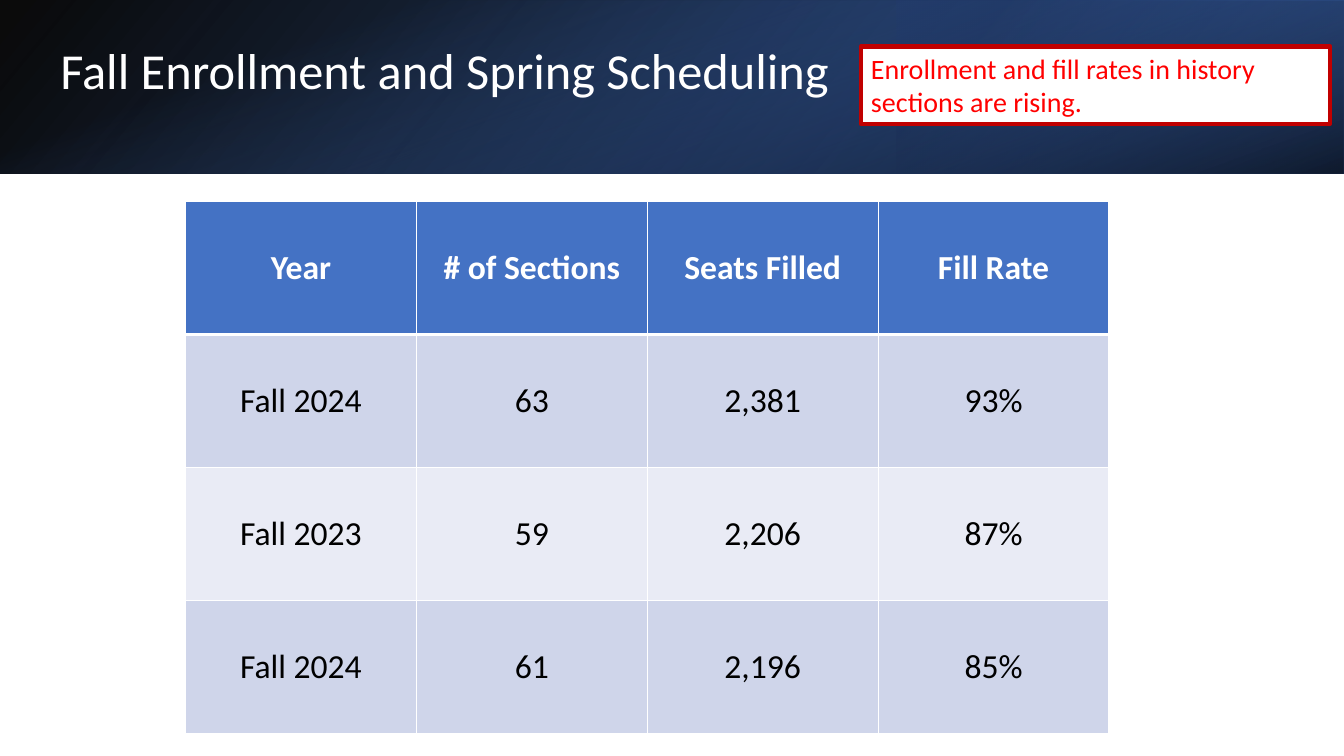
import pptx
import pptx.dml.color
import pptx.enum.shapes
import pptx.enum.text
import pptx.oxml
import pptx.oxml.ns
import pptx.util

Inches = pptx.util.Inches
Pt = pptx.util.Pt
RGBColor = pptx.dml.color.RGBColor
MIDDLE = pptx.enum.text.MSO_ANCHOR.MIDDLE
TOP = pptx.enum.text.MSO_ANCHOR.TOP

TITLE = "Fall Enrollment and Spring Scheduling"
CALLOUT = "Enrollment and fill rates in history sections are rising."
ROWS = [
    ("Year", "# of Sections", "Seats Filled", "Fill Rate"),
    ("Fall 2024", "63", "2,381", "93%"),
    ("Fall 2023", "59", "2,206", "87%"),
    ("Fall 2024", "61", "2,196", "85%"),
]

FONT = "Calibri"
WHITE = RGBColor(0xFF, 0xFF, 0xFF)
BLACK = RGBColor(0x00, 0x00, 0x00)
RED = RGBColor(0xFF, 0x00, 0x00)
DARK_RED = RGBColor(0xC0, 0x00, 0x00)
BLUE = RGBColor(0x44, 0x72, 0xC4)
DEEP_BLUE = RGBColor(0x2F, 0x55, 0x97)
NAVY = RGBColor(0x20, 0x38, 0x64)
BAND_DARK = RGBColor(0xCF, 0xD5, 0xEA)
BAND_LIGHT = RGBColor(0xE9, 0xEB, 0xF5)

# box, rotation, flipped, gradient angle, stops (position %, colour, opacity %)
BANNER_LAYERS = [
    ((0, 0, 13.33, 1.72), 0, True, 140, [(0, BLACK, 96), (100, DEEP_BLUE, 100)]),
    ((8.89, 0, 4.44, 1.72), 180, True, 320, [(19, NAVY, 68), (100, BLUE, 79)]),
    ((5.8, -5.8, 1.72, 13.33), 90, False, 340, [(23, BLUE, 0), (99, BLACK, 74)]),
]
TABLE_LEFT, TABLE_TOP = 1.84, 2
COLUMN_WIDTH, ROW_HEIGHT = 2.29, 1.32


def add_rectangle(slide, box):
    shape = slide.shapes.add_shape(
        pptx.enum.shapes.MSO_SHAPE.RECTANGLE, *map(Inches, box))
    shape.shadow.inherit = False
    return shape


def add_banner_layer(slide, box, rotation, flipped, angle, stops):
    shape = add_rectangle(slide, box)
    shape.rotation = rotation
    shape.line.fill.background()
    shape.fill.background()
    properties = shape.element.spPr
    if flipped:
        properties.find(pptx.oxml.ns.qn("a:xfrm")).set("flipH", "1")
    stop_xml = "".join(
        f'<a:gs pos="{position * 1000}"><a:srgbClr val="{color}">'
        f'<a:alpha val="{opacity * 1000}"/></a:srgbClr></a:gs>'
        for position, color, opacity in stops)
    gradient = pptx.oxml.parse_xml(
        f'<a:gradFill {pptx.oxml.ns.nsdecls("a")} rotWithShape="1">'
        f'<a:gsLst>{stop_xml}</a:gsLst>'
        f'<a:lin ang="{angle * 60000}" scaled="0"/></a:gradFill>')
    properties.replace(properties.find(pptx.oxml.ns.qn("a:noFill")), gradient)


def write(text_frame, text, size, color, anchor):
    text_frame.word_wrap = True
    text_frame.vertical_anchor = anchor
    paragraph = text_frame.paragraphs[0]
    paragraph.text = text
    paragraph.font.name = FONT
    paragraph.font.size = Pt(size)
    paragraph.font.color.rgb = color
    paragraph.alignment = pptx.enum.text.PP_ALIGN.LEFT
    return paragraph


def set_borders(cell, top, bottom):
    """Draw white cell borders; top and bottom are widths in points."""
    properties = cell._tc.get_or_add_tcPr()
    widths = [("lnL", 1), ("lnR", 1), ("lnT", top), ("lnB", bottom)]
    for index, (side, width) in enumerate(widths):
        properties.insert(index, pptx.oxml.parse_xml(
            f'<a:{side} {pptx.oxml.ns.nsdecls("a")} w="{Pt(width)}">'
            f'<a:solidFill><a:srgbClr val="{WHITE}"/></a:solidFill></a:{side}>'))


def add_enrollment_table(slide):
    column_count = len(ROWS[0])
    table = slide.shapes.add_table(
        len(ROWS), column_count, Inches(TABLE_LEFT), Inches(TABLE_TOP),
        Inches(COLUMN_WIDTH * column_count), Inches(ROW_HEIGHT * len(ROWS))).table
    for row_index, row in enumerate(ROWS):
        header = row_index == 0
        band = BAND_DARK if row_index % 2 else BAND_LIGHT
        for column_index, text in enumerate(row):
            cell = table.cell(row_index, column_index)
            cell.fill.solid()
            cell.fill.fore_color.rgb = BLUE if header else band
            cell.vertical_anchor = MIDDLE
            paragraph = write(cell.text_frame, text, 24, WHITE if header else BLACK, MIDDLE)
            paragraph.alignment = pptx.enum.text.PP_ALIGN.CENTER
            paragraph.font.bold = header
            set_borders(cell, 3 if row_index == 1 else 1, 3 if header else 1)


def main():
    presentation = pptx.Presentation()
    presentation.slide_width = Inches(13.33)
    presentation.slide_height = Inches(7.5)
    slide = presentation.slides.add_slide(presentation.slide_layouts[6])

    for layer in BANNER_LAYERS:
        add_banner_layer(slide, *layer)

    title = slide.shapes.add_textbox(*map(Inches, (0.5, 0.46, 7.9, 0.96)))
    title.text_frame.margin_top = 0
    write(title.text_frame, TITLE, 36, WHITE, TOP).line_spacing = 0.9

    add_enrollment_table(slide)

    callout = add_rectangle(slide, (8.54, 0.46, 4.65, 0.77))
    callout.fill.solid()
    callout.fill.fore_color.rgb = WHITE
    callout.line.color.rgb = DARK_RED
    callout.line.width = Pt(3.25)
    write(callout.text_frame, CALLOUT, 20, RED, TOP)

    presentation.save("out.pptx")


if __name__ == "__main__":
    main()
